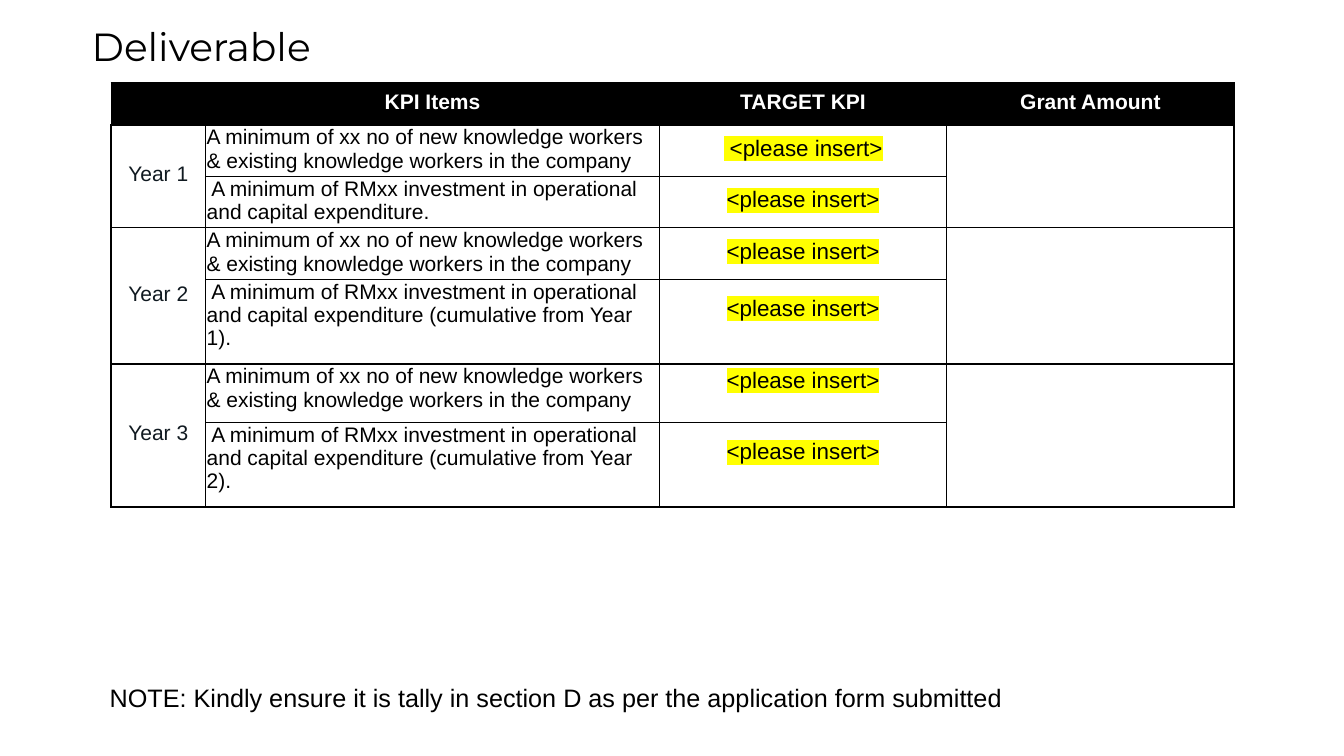
from dataclasses import dataclass

from lxml.etree import SubElement
from pptx import Presentation
from pptx.dml.color import RGBColor
from pptx.enum.text import MSO_ANCHOR, PP_ALIGN
from pptx.oxml import parse_xml
from pptx.oxml.ns import nsdecls, qn
from pptx.util import Inches, Pt

TITLE = "Deliverable"
NOTE = "NOTE: Kindly ensure it is tally in section D as per the application form submitted"
HEADS = ["", "KPI Items", "TARGET KPI", "Grant Amount"]
STAFF = "A minimum of xx no of new knowledge workers & existing knowledge workers in the company "
SPEND = " A minimum of RMxx investment in operational and capital expenditure"
INSERT = "<please insert>"
YEARS = [
    ("Year 1", [(STAFF, " " + INSERT), (SPEND + ".", INSERT)]),
    ("Year 2", [(STAFF, INSERT), (SPEND + " (cumulative from Year 1).", INSERT)]),
    ("Year 3", [(STAFF, INSERT), (SPEND + " (cumulative from Year 2).", INSERT)]),
]
COLS = [0.94, 4.5, 2.85, 2.85]
ROWS = [0.42, 0.51, 0.51, 0.51, 0.84, 0.58, 0.84]


@dataclass(frozen=True)
class Theme:
    ink: str = "000000"
    paper: str = "FFFFFF"
    year: str = "101920"
    mark: str = "FFFF00"
    head: str = "Montserrat"
    body: str = "Arial"
    title: int = 28
    note: int = 18
    cell: int = 15
    target: int = 16


theme = Theme()


def style(para, size, color=theme.ink, name=theme.body, bold=False, align=PP_ALIGN.LEFT):
    para.alignment = align
    font = para.font
    font.name, font.size, font.bold = name, Pt(size), bold
    font.color.rgb = RGBColor.from_string(color)


def edge(cell, top):
    props = cell._tc.get_or_add_tcPr()
    for spot, side in enumerate("LRTB"):
        width = Pt(0.5) if top and side != "B" else Pt(1)
        line = parse_xml(
            f'<a:ln{side} {nsdecls("a")} w="{width}"><a:solidFill>'
            f'<a:srgbClr val="{theme.ink}"/></a:solidFill></a:ln{side}>'
        )
        props.insert(spot, line)


def write(cell, text, size, color=theme.ink, bold=False, align=PP_ALIGN.CENTER,
          anchor=MSO_ANCHOR.MIDDLE, foot=0.05):
    cell.text = text
    cell.vertical_anchor = anchor
    cell.margin_bottom = Inches(foot)
    style(cell.text_frame.paragraphs[0], size, color, bold=bold, align=align)


def mark(cell):
    run = cell.text_frame.paragraphs[0].runs[0]
    run.font.color.rgb = RGBColor.from_string(theme.ink)
    light = SubElement(run.font._element, qn("a:highlight"))
    SubElement(light, qn("a:srgbClr")).set("val", theme.mark)


def add_title(slide):
    title = slide.shapes.title
    title.left, title.top = Inches(0.81), Inches(0.17)
    title.width, title.height = Inches(8.87), Inches(0.57)
    title.text_frame.text = TITLE
    title.text_frame.vertical_anchor = MSO_ANCHOR.MIDDLE
    style(title.text_frame.paragraphs[0], theme.title, name=theme.head)


def add_grid(slide):
    frame = slide.shapes.add_table(len(ROWS), len(COLS), Inches(1.1), Inches(0.82),
                                   Inches(sum(COLS)), Inches(sum(ROWS)))
    table = frame.table
    for col, width in zip(table.columns, COLS):
        col.width = Inches(width)
    for i, (row, height) in enumerate(zip(table.rows, ROWS)):
        row.height = Inches(height)
        for cell in row.cells:
            cell.margin_left = cell.margin_right = cell.margin_top = Inches(0.01)
            cell.fill.solid()
            cell.fill.fore_color.rgb = RGBColor.from_string(theme.paper if i else theme.ink)
            edge(cell, i == 0)
    for col, head in enumerate(HEADS):
        write(table.cell(0, col), head, theme.cell, theme.paper, bold=True)
    for i, (year, items) in enumerate(YEARS):
        first = 1 + 2 * i
        for col in (0, 3):
            table.cell(first, col).merge(table.cell(first + 1, col))
        write(table.cell(first, 0), year, theme.cell, theme.year)
        for row, (item, target) in enumerate(items, first):
            write(table.cell(row, 1), item, theme.cell, align=PP_ALIGN.LEFT,
                  anchor=MSO_ANCHOR.TOP, foot=0)
            goal = table.cell(row, 2)
            write(goal, target, theme.target, foot=0.26 if ROWS[row] > 0.55 else 0.05)
            mark(goal)


def add_note(slide):
    box = slide.shapes.add_textbox(Inches(0.99), Inches(6.72), Inches(11.14), Inches(0.4))
    box.text_frame.word_wrap = True
    box.text_frame.text = NOTE
    para = box.text_frame.paragraphs[0]
    style(para, theme.note, align=PP_ALIGN.JUSTIFY)
    para.space_after = Pt(6)


def main():
    deck = Presentation()
    deck.slide_width, deck.slide_height = Inches(13.33), Inches(7.5)
    slide = deck.slides.add_slide(deck.slide_layouts[5])
    add_title(slide)
    add_note(slide)
    add_grid(slide)
    deck.save("out.pptx")


if __name__ == "__main__":
    main()
